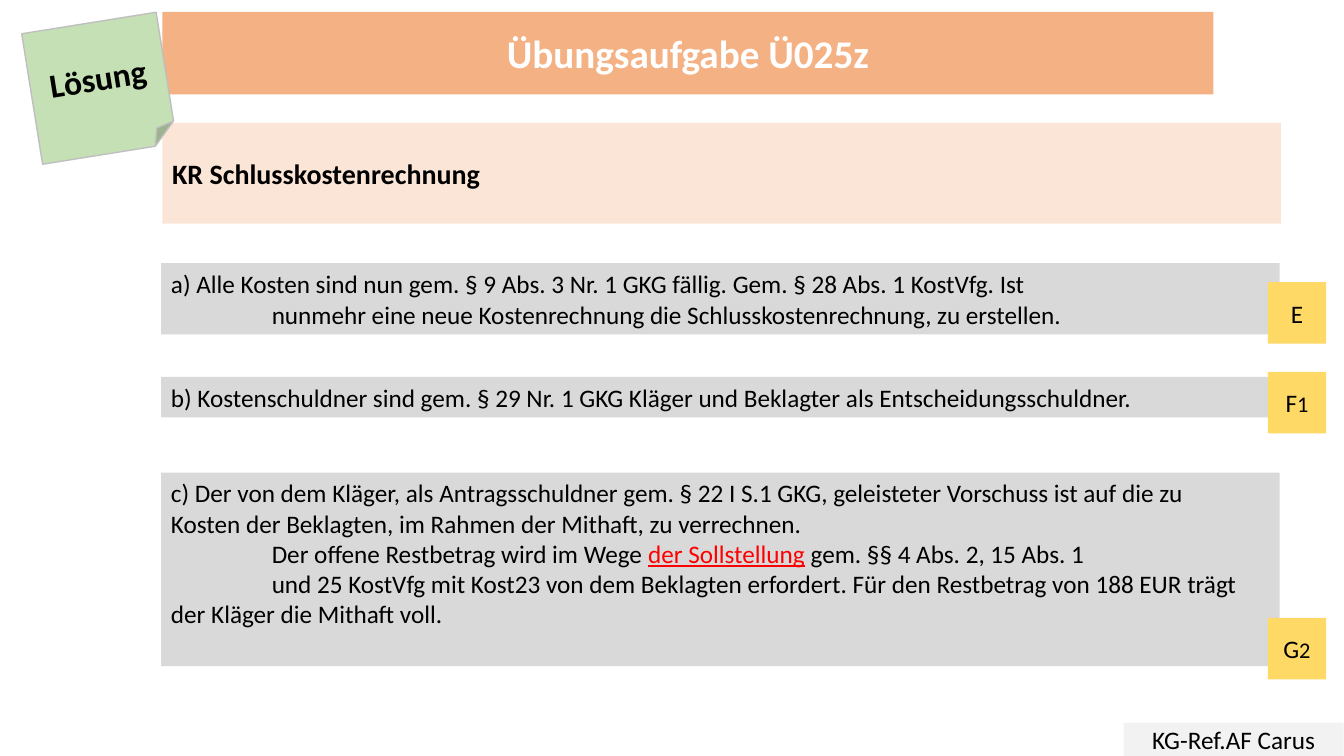
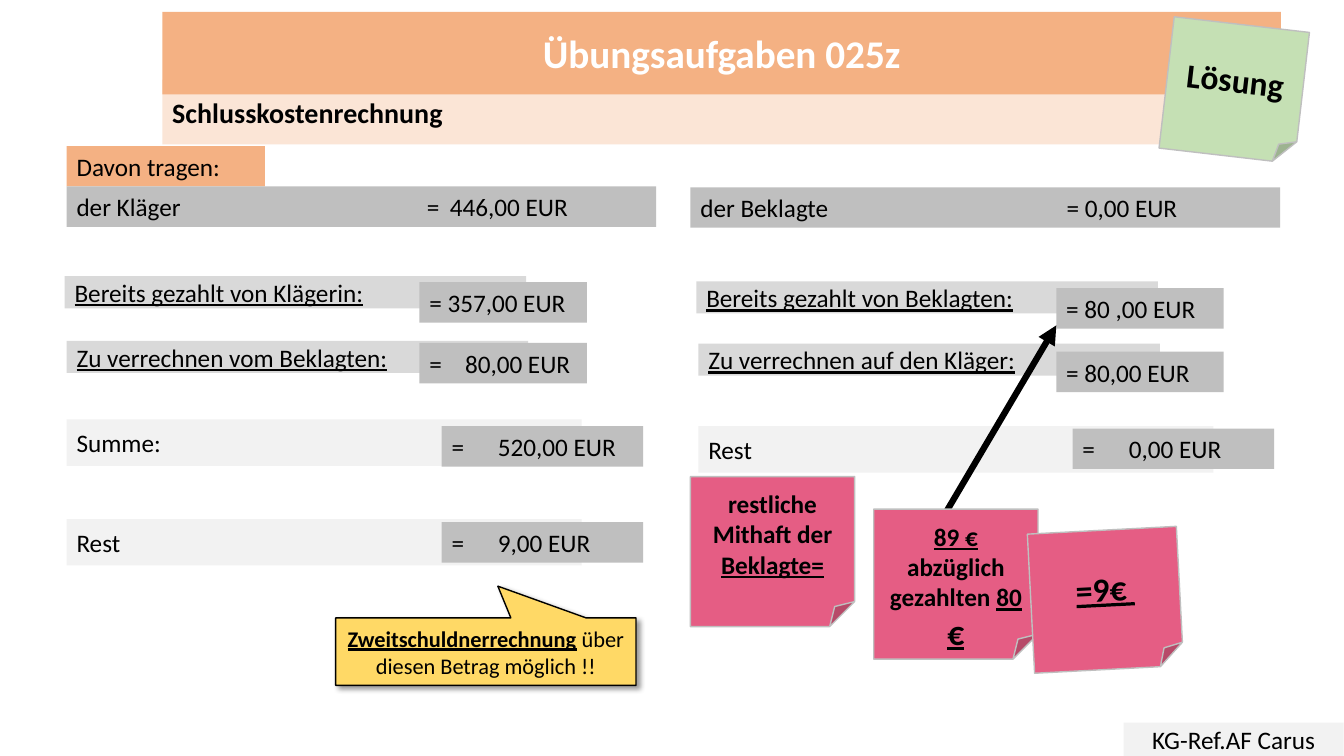
from dataclasses import dataclass

from lxml import etree
from pptx import Presentation
from pptx.dml.color import RGBColor
from pptx.enum.shapes import MSO_CONNECTOR, MSO_SHAPE
from pptx.enum.text import MSO_ANCHOR, MSO_AUTO_SIZE, PP_ALIGN
from pptx.oxml.ns import qn
from pptx.util import Cm, Pt

RECT = MSO_SHAPE.RECTANGLE
NOTE = MSO_SHAPE.FOLDED_CORNER
CALLOUT = MSO_SHAPE.RECTANGULAR_CALLOUT
STRAIGHT = MSO_CONNECTOR.STRAIGHT
LEFT, CENTER = PP_ALIGN.LEFT, PP_ALIGN.CENTER
TOP, MIDDLE = MSO_ANCHOR.TOP, MSO_ANCHOR.MIDDLE
NO_FIT = MSO_AUTO_SIZE.NONE
TITLE_ONLY = 5


@dataclass(frozen=True)
class Theme:
    font: str = "Calibri"
    black: str = "000000"
    white: str = "FFFFFF"
    red: str = "FF0000"
    orange: str = "F4B183"
    peach: str = "FBE5D6"
    pale: str = "F2F2F2"
    light: str = "D9D9D9"
    grey: str = "BFBFBF"
    yellow: str = "FFD966"
    green: str = "C5E0B4"
    pink: str = "E55D84"
    title: int = 28
    large: int = 24
    heading: int = 20
    body: int = 18
    small: int = 16


T = Theme()


@dataclass(frozen=True)
class Run:
    text: str
    size: int = T.body
    color: str = T.black
    bold: bool = False
    underline: bool = False


@dataclass(frozen=True)
class Para:
    runs: tuple[Run, ...]
    indent: float = 0
    tabs: tuple[float, ...] = ()


@dataclass(frozen=True)
class Box:
    x: float
    y: float
    w: float
    h: float
    fill: str
    paras: tuple[Para, ...]
    shape: int = RECT
    align: int = LEFT
    anchor: int = MIDDLE
    line: str | None = None
    rotation: float = 0
    top_inset: float = 0.13


@dataclass(frozen=True)
class Payment:
    x: float
    y: float
    label: str
    amount_x: float
    amount_y: float
    amount: str


def para(text: str, tabs: tuple[float, ...] = (), **style) -> tuple[Para, ...]:
    return (Para((Run(text, **style),), tabs=tabs),)


def write(tf, paras: tuple[Para, ...], align: int) -> None:
    for i, item in enumerate(paras):
        p = tf.add_paragraph() if i else tf.paragraphs[0]
        p.alignment = align
        pPr = p._p.get_or_add_pPr()
        if item.indent:
            pPr.set("marL", "0")
            pPr.set("indent", str(Cm(item.indent)))
        if item.tabs:
            tabs = etree.SubElement(pPr, qn("a:tabLst"))
            for pos in item.tabs:
                etree.SubElement(tabs, qn("a:tab"), pos=str(Cm(pos)), algn="l")
        for run in item.runs:
            for n, text in enumerate(run.text.split("\n")):
                if n:
                    p.add_line_break()
                r = p.add_run()
                r.text = text
                r.font.name = T.font
                r.font.size = Pt(run.size)
                r.font.bold = run.bold
                r.font.underline = run.underline
                r.font.color.rgb = RGBColor.from_string(run.color)


def paint(sp, fill: str, line: str | None = None) -> None:
    sp.fill.solid()
    sp.fill.fore_color.rgb = RGBColor.from_string(fill)
    if line:
        sp.line.color.rgb = RGBColor.from_string(line)
        sp.line.width = Pt(1)
    else:
        sp.line.fill.background()


def draw(shapes, box: Box):
    sp = shapes.add_shape(box.shape, Cm(box.x), Cm(box.y), Cm(box.w), Cm(box.h))
    sp.shadow.inherit = False
    sp.rotation = box.rotation
    paint(sp, box.fill, box.line)
    tf = sp.text_frame
    tf.word_wrap = True
    tf.vertical_anchor = box.anchor
    tf.margin_top = Cm(box.top_inset)
    write(tf, box.paras, box.align)
    return sp


def draw_title(s, text: str, width: float) -> None:
    sp = s.shapes.title
    sp.left, sp.top, sp.width, sp.height = Cm(4.09), Cm(0.3), Cm(width), Cm(2.08)
    geom = etree.SubElement(sp.element.spPr, qn("a:prstGeom"), prst="roundRect")
    etree.SubElement(geom, qn("a:avLst"))
    paint(sp, T.orange)
    tf = sp.text_frame
    tf.word_wrap = True
    tf.auto_size = NO_FIT
    tf.vertical_anchor = MIDDLE
    write(tf, para(text, size=T.title, color=T.white, bold=True), CENTER)
    sp.element.getparent().append(sp.element)


def draw_note(s, x: float, y: float, rotation: float) -> None:
    draw(s.shapes, Box(x, y, 3.43, 3.33, T.green, para("Lösung", size=T.large, bold=True),
                       NOTE, CENTER, line=T.grey, rotation=rotation))


def start_slide(prs, title: str, title_w: float, heading: str, band_y: float, band_h: float):
    s = prs.slides.add_slide(prs.slide_layouts[TITLE_ONLY])
    draw(s.shapes, Box(4.09, band_y, 28.19, band_h, T.peach,
                       para(heading, size=T.heading, bold=True)))
    draw(s.shapes, Box(28.32, 18.21, 5.54, 0.84, T.pale, para("KG-Ref.AF Carus"), align=CENTER))
    draw_title(s, title, title_w)
    return s


def draw_payment(s, row: Payment) -> None:
    draw(s.shapes, Box(row.x, row.y, 11.63, 0.81, T.light, para(row.label, underline=True)))
    draw(s.shapes, Box(row.amount_x, row.amount_y, 4.22, 1.02, T.grey, para(row.amount, (0.9,))))


def draw_sum(s, row: Payment) -> None:
    shapes = s.shapes.add_group_shape().shapes
    draw(shapes, Box(row.x, row.y, 12.98, 1.17, T.pale, para(row.label)))
    draw(shapes, Box(row.amount_x, row.amount_y, 5.08, 1.02, T.grey, para(row.amount, (1.17,))))


def draw_arrow(s, x1: float, y1: float, x2: float, y2: float) -> None:
    cn = s.shapes.add_connector(STRAIGHT, Cm(x1), Cm(y1), Cm(x2), Cm(y2))
    cn.line.color.rgb = RGBColor.from_string(T.black)
    cn.line.width = Pt(4.5)
    etree.SubElement(cn.line._get_or_add_ln(), qn("a:tailEnd"), type="triangle")
    etree.SubElement(cn.element.spPr, qn("a:effectLst"))


def draw_callout(s) -> None:
    text = (Para((Run("Zweitschuldnerrechnung", T.small, bold=True, underline=True),
                  Run(" über diesen Betrag möglich !!", T.small))),)
    sp = draw(s.shapes, Box(8.46, 15.57, 7.57, 1.7, T.yellow, text, CALLOUT, CENTER, line=T.black))
    sp.adjustments[0], sp.adjustments[1] = 0.04, -0.97
    effects = sp.element.spPr.find(qn("a:effectLst"))
    shadow = etree.SubElement(effects, qn("a:outerShdw"), blurRad=str(Pt(4)), dist=str(Pt(3)),
                              dir=str(45 * 60000), algn="tl", rotWithShape="0")
    color = etree.SubElement(shadow, qn("a:srgbClr"), val=T.black)
    etree.SubElement(color, qn("a:alpha"), val="40000")


def build_answers(prs) -> None:
    s = start_slide(prs, "Übungsaufgabe Ü025z", 26.49, "KR Schlusskostenrechnung", 3.1, 2.54)
    draw_note(s, 0.79, 0.56, 350.9)
    due = para("a) Alle Kosten sind nun gem. § 9 Abs. 3 Nr. 1 GKG fällig. "
               "Gem. § 28 Abs. 1 KostVfg. Ist") + (
        Para((Run("nunmehr eine neue Kostenrechnung die Schlusskostenrechnung, zu erstellen."),),
             indent=2.54),)
    debtors = para("b) Kostenschuldner sind gem. § 29 Nr. 1 GKG Kläger und Beklagter "
                   "als Entscheidungsschuldner.")
    offset = para("c) Der von dem Kläger, als Antragsschuldner gem. § 22 I S.1 GKG, geleisteter "
                  "Vorschuss ist auf die zu\nKosten der Beklagten, im Rahmen der Mithaft, "
                  "zu verrechnen.") + (
        Para((Run("Der offene Restbetrag wird im Wege "),
              Run("der Sollstellung", color=T.red, underline=True),
              Run(" gem. §§ 4 Abs. 2, 15 Abs. 1")), indent=2.54),
        Para((Run("und 25 KostVfg mit Kost23 von dem Beklagten erfordert. Für den Restbetrag "
                  "von 188 EUR trägt\nder Kläger die Mithaft voll."),), indent=2.54))
    for y, h, paras, anchor in ((6.63, 1.8, due, MIDDLE), (9.5, 1.02, debtors, MIDDLE),
                                (11.91, 4.88, offset, TOP)):
        draw(s.shapes, Box(4.06, y, 28.19, h, T.light, paras, anchor=anchor))
    for y, letter, digit in ((7.11, "E", ""), (9.37, "F", "1"), (15.57, "G", "2")):
        runs = (Run(letter),) + ((Run(digit, T.small),) if digit else ())
        draw(s.shapes, Box(31.95, y, 1.47, 1.55, T.yellow, (Para(runs),), align=CENTER))


def build_settlement(prs) -> None:
    s = start_slide(prs, "Übungsaufgaben 025z", 28.19, "Schlusskostenrechnung", 2.01, 1.63)
    draw_note(s, 29.39, 0.61, 6.6)
    draw(s.shapes, Box(1.68, 3.68, 5, 1.02, T.orange, para("Davon tragen:")))
    for x, y, text, tabs in ((1.68, 4.7, "der Kläger\t=\t446,00 EUR", (8.83, 9.41)),
                             (17.4, 4.72, "der Beklagte\t= 0,00 EUR", (9.23,))):
        draw(s.shapes, Box(x, y, 14.86, 1.02, T.grey, para(text, tabs)))
    for row in (
        Payment(1.63, 6.96, "Bereits gezahlt von Klägerin:", 10.57, 7.11, "= 357,00 EUR"),
        Payment(1.68, 8.59, "Zu verrechnen vom Beklagten:", 10.57, 8.64, "=\t80,00 EUR"),
        Payment(17.55, 7.09, "Bereits gezahlt von Beklagten:", 26.62, 7.26, "= 80 ,00 EUR"),
        Payment(17.6, 8.66, "Zu verrechnen auf den Kläger:", 26.62, 8.86, "= 80,00 EUR"),
    ):
        draw_payment(s, row)
    for row in (
        Payment(1.68, 10.57, "Summe:", 11.13, 10.74, "=\t520,00 EUR"),
        Payment(1.68, 13.08, "Rest", 11.13, 13.16, "=\t9,00 EUR"),
        Payment(17.6, 10.74, "Rest", 27.03, 10.8, "=\t0,00 EUR"),
    ):
        draw_sum(s, row)
    draw_arrow(s, 23.39, 13.67, 26.62, 8.2)
    liability = (Run("restliche Mithaft der ", bold=True),
                 Run("Beklagte=", bold=True, underline=True))
    deduction = (Run("89 € ", bold=True, underline=True),
                 Run("abzüglich gezahlten ", bold=True),
                 Run("80 ", bold=True, underline=True),
                 Run("€", T.large, bold=True, underline=True))
    for x, y, runs in ((17.4, 12.01, liability), (22.02, 12.83, deduction)):
        draw(s.shapes, Box(x, y, 4.14, 3.78, T.pink, (Para(runs),), NOTE, CENTER, TOP,
                           T.grey, top_inset=0.3))
    draw(s.shapes, Box(25.98, 13.36, 3.76, 3.51, T.pink,
                       para("=9€ ", size=T.large, bold=True, underline=True),
                       NOTE, CENTER, line=T.grey, rotation=357))
    draw_callout(s)


def main() -> None:
    prs = Presentation()
    prs.slide_width, prs.slide_height = Cm(33.87), Cm(19.05)
    build_answers(prs)
    build_settlement(prs)
    prs.save("out.pptx")


if __name__ == "__main__":
    main()
